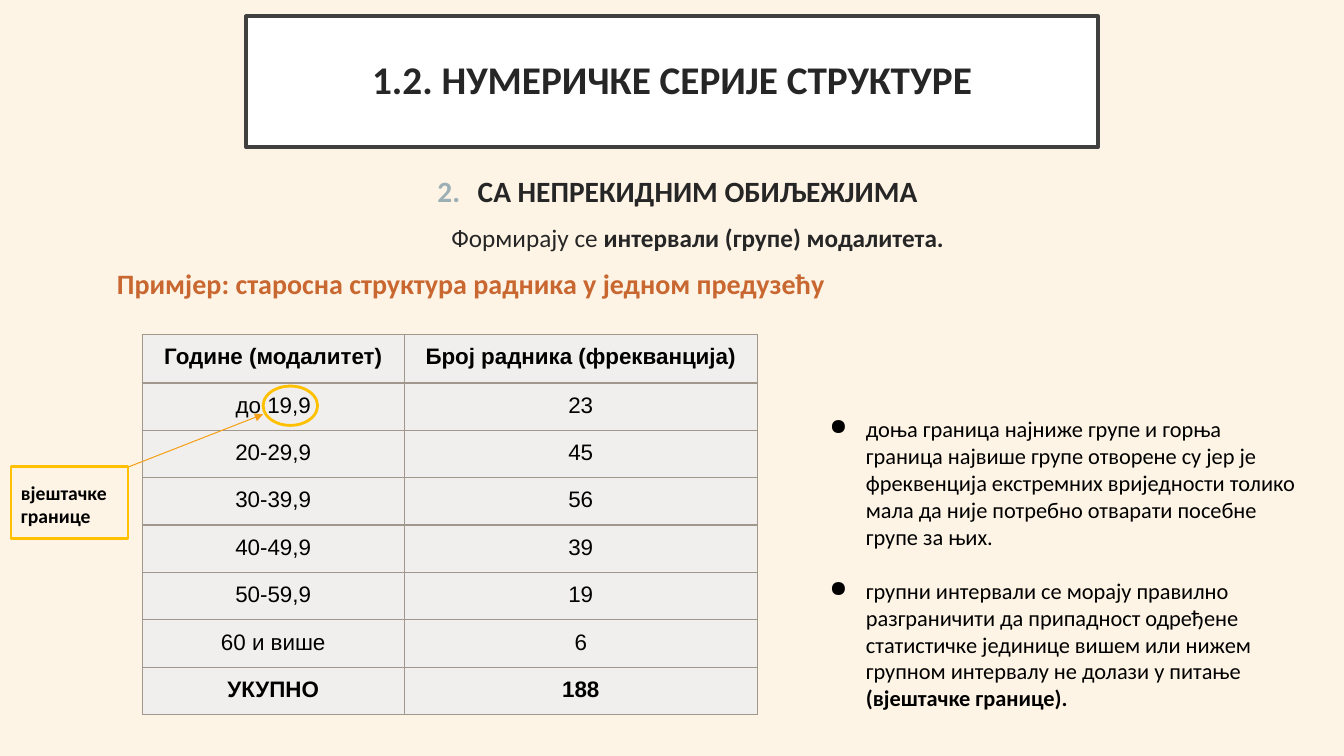
from lxml.etree import SubElement as Sub
from pptx import Presentation
from pptx.dml.color import RGBColor
from pptx.enum.shapes import MSO_CONNECTOR as Conn, MSO_SHAPE as Shape
from pptx.enum.text import MSO_ANCHOR as Anchor, MSO_AUTO_SIZE as Auto, PP_ALIGN as Align
from pptx.oxml.ns import qn
from pptx.util import Inches, Pt


def ink(code):
    return RGBColor.from_string(code)


def place(item, box):
    item.left, item.top, item.width, item.height = map(Inches, box)


def write(para, text, font="Calibri", size=16, color="000000", bold=False,
          align=Align.LEFT, before=0, lines=1.0):
    para.alignment = align
    para.space_before, para.line_spacing = Pt(before), lines
    run = para.add_run()
    run.text = text
    face = run.font
    face.name, face.size, face.bold = font, Pt(size), bold
    face.color.rgb = ink(color)


def mark(para, left=0, hang=0, color=None, kind="buNone", **attrs):
    """Set the indents of a paragraph and its bullet or number."""
    props = para._p.get_or_add_pPr()
    props.set("marL", str(Inches(left)))
    props.set("indent", str(Inches(hang)))
    if color:
        Sub(Sub(props, qn("a:buClr")), qn("a:srgbClr"), val=color)
    Sub(props, qn("a:" + kind), **attrs)


class Deck:
    dark, gold, grid, pale = "262626", "FFC000", "A0988C", "F0EFEE"

    def __init__(self):
        self.prs = Presentation()
        self.prs.slide_width, self.prs.slide_height = Inches(13.33), Inches(7.5)
        self.slide = self.prs.slides.add_slide(self.prs.slide_layouts[1])
        self.shapes = self.slide.shapes
        fill = self.slide.background.fill
        fill.solid()
        fill.fore_color.rgb = ink("FEF4E5")

    def frame(self, item, side=0.1, top=0.1, anchor=Anchor.TOP):
        text = item.text_frame
        text.word_wrap, text.auto_size = True, Auto.NONE
        text.vertical_anchor = anchor
        text.margin_left = text.margin_right = Inches(side)
        text.margin_top = text.margin_bottom = Inches(top)
        return text

    def title(self, box, text):
        item = self.shapes.title
        place(item, box)
        item.fill.solid()
        item.fill.fore_color.rgb = ink("FFFFFF")
        item.line.color.rgb, item.line.width = ink("404040"), Pt(2.5)
        para = self.frame(item, 0.2, 0.2, Anchor.MIDDLE).paragraphs[0]
        write(para, text, size=28, color=self.dark, bold=True,
              align=Align.CENTER, lines=0.9)

    def body(self, box):
        item = self.slide.placeholders[1]
        place(item, box)
        return self.frame(item, 0.1, 0.05)

    def text(self, box):
        return self.frame(self.shapes.add_textbox(*map(Inches, box)))

    def table(self, box, rows, cols, heights):
        table = self.shapes.add_table(len(rows), len(cols), *map(Inches, box)).table
        table.first_row = table.horz_banding = False
        for col, width in zip(table.columns, cols):
            col.width = Inches(width)
        for i, (row, height) in enumerate(zip(rows, heights)):
            table.rows[i].height = Inches(height)
            for j, text in enumerate(row):
                self.cell(table.cell(i, j), text, i in (0, len(rows) - 1))

    def cell(self, cell, text, bold):
        cell.margin_left = cell.margin_right = Inches(0.1)
        cell.margin_top = cell.margin_bottom = Inches(0.1)
        write(cell.text_frame.paragraphs[0], text, font="Arial", bold=bold,
              align=Align.CENTER)
        props = cell._tc.get_or_add_tcPr()
        for side in ("lnL", "lnR", "lnT", "lnB"):
            edge = Sub(props, qn("a:" + side), w=str(Pt(1)))
            Sub(Sub(edge, qn("a:solidFill")), qn("a:srgbClr"), val=self.grid)
        cell.fill.solid()
        cell.fill.fore_color.rgb = ink(self.pale)

    def ring(self, kind, box):
        """Add an unfilled gold outline."""
        item = self.shapes.add_shape(kind, *map(Inches, box))
        item.shadow.inherit = False
        item.fill.background()
        item.line.color.rgb, item.line.width = ink(self.gold), Pt(2)

    def arrow(self, ends):
        line = self.shapes.add_connector(Conn.STRAIGHT, *map(Inches, ends))
        line.line.color.rgb, line.line.width = ink("F6A017"), Pt(0.75)
        Sub(line.line._get_or_add_ln(), qn("a:tailEnd"), type="triangle")
        Sub(line._element.spPr, qn("a:effectLst"))


def main():
    deck = Deck()
    deck.title((2.44, 0.16, 8.45, 1.3), "1.2. НУМЕРИЧКЕ СЕРИЈЕ СТРУКТУРЕ")

    body = deck.body((1.06, 1.67, 11.22, 1.72))
    head, note, case = body.paragraphs[0], body.add_paragraph(), body.add_paragraph()
    mark(head, 0.5, -0.4, "9BAFB5", "buAutoNum", type="arabicPeriod", startAt="2")
    write(head, "СА НЕПРЕКИДНИМ ОБИЉЕЖЈИМА", size=21, color=deck.dark, bold=True,
          align=Align.CENTER)
    note.level = 1
    mark(note, 0.5)
    for text, bold in (("Формирају се ", False),
                       ("интервали (групе) модалитета.", True)):
        write(note, text, size=18, color=deck.dark, bold=bold,
              align=Align.CENTER, before=10)
    mark(case)
    write(case, "Примјер: старосна структура радника у једном предузећу",
          size=20, color="C96731", bold=True, before=10)

    rows = [("Године (модалитет)", "Број радника (фрекванција)"),
            ("до 19,9", "23"), ("20-29,9", "45"), ("30-39,9", "56"),
            ("40-49,9", "39"), ("50-59,9", "19"), ("60 и више", "6"),
            ("УКУПНО", "188")]
    deck.table((1.41, 3.32, 6.1, 3.77), rows, (2.6, 3.5), [0.48] + [0.47] * 7)

    list_ = deck.text((7.99, 4.02, 5.03, 3.16))
    low, rule = list_.paragraphs[0], list_.add_paragraph()
    for para in (low, rule):
        mark(para, 0.5, -0.36, "000000", "buChar", char="●")
    write(low, "доња граница најниже групе и горња граница највише групе отворене "
          "су јер је фреквенција екстремних вриједности толико мала да није "
          "потребно отварати посебне групе за њих.")
    for text, bold in (("групни интервали се морају правилно разграничити да "
                        "припадност одређене статистичке јединице вишем или нижем "
                        "групном интервалу не долази у питање ", False),
                       ("(вјештачке границе).", True)):
        write(rule, text, bold=bold, before=19.5)

    label = deck.text((0.11, 4.67, 1.29, 0.67))
    write(label.paragraphs[0], "вјештачке", size=14, bold=True)
    write(label.add_paragraph(), "границе", size=14, bold=True)
    deck.arrow((1.28, 4.63, 2.61, 4.11))
    deck.ring(Shape.OVAL, (2.61, 3.83, 0.54, 0.39))
    deck.ring(Shape.RECTANGLE, (0.11, 4.63, 1.16, 0.71))

    deck.prs.save("out.pptx")


if __name__ == "__main__":
    main()
